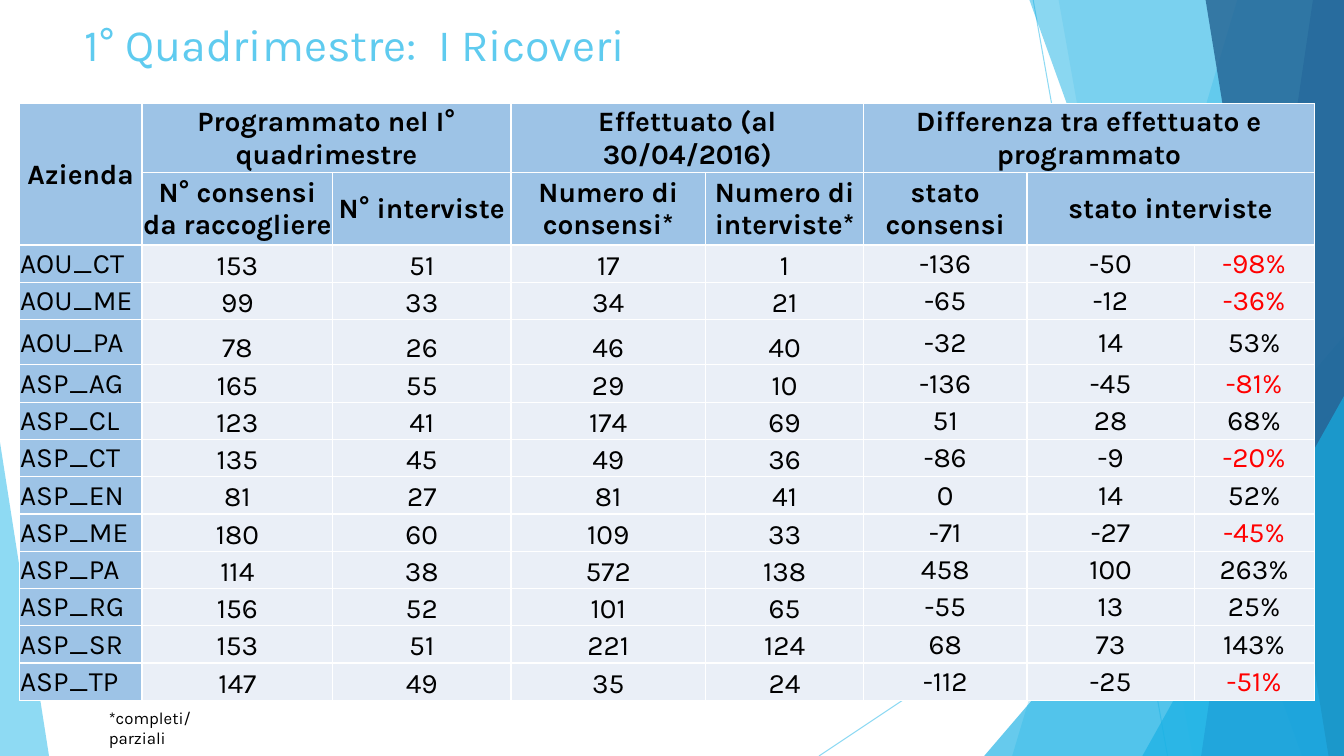
import lxml.etree
import pptx
import pptx.dml.color
import pptx.enum.shapes
import pptx.enum.text
import pptx.oxml
import pptx.oxml.ns
import pptx.util

Pt = pptx.util.Pt
qn = pptx.oxml.ns.qn
ALIGN = pptx.enum.text.PP_ALIGN
ANCHOR = pptx.enum.text.MSO_ANCHOR

FONT = "Karla"
BLACK, WHITE, RED = "000000", "FFFFFF", "FF0000"
SKY, AZURE, BLUE, NAVY = "5FCBEF", "17B0E4", "2E83C3", "236292"
HEADER_FILL, BODY_FILL = "9DC3E6", "EAEFF7"
TOP, RIGHT, BOTTOM = -0.7, 960, 540

RAYS = [((738, 0), (834, BOTTOM)), ((RIGHT, 290), (585, BOTTOM))]

# Corner points, colour, opacity in percent; back to front.
FACETS = [
    ([(884.2, TOP), (RIGHT, TOP), (RIGHT, BOTTOM), (722.9, BOTTOM)], SKY, 36),
    ([(756, TOP), (RIGHT, TOP), (RIGHT, BOTTOM), (851.8, BOTTOM)], SKY, 20),
    ([(703.4, BOTTOM), (RIGHT, 239.8), (RIGHT, BOTTOM)], AZURE, 66),
    ([(735.1, TOP), (RIGHT, TOP), (RIGHT, BOTTOM), (929.5, BOTTOM)], AZURE, 50),
    ([(938.2, TOP), (RIGHT, TOP), (RIGHT, BOTTOM), (858.2, BOTTOM)], BLUE, 70),
    ([(861.1, TOP), (RIGHT, TOP), (RIGHT, BOTTOM), (949, BOTTOM)], NAVY, 80),
    ([(816.5, BOTTOM), (RIGHT, 283), (RIGHT, BOTTOM)], AZURE, 66),
    ([(0, BOTTOM), (0, 316.1), (35.3, BOTTOM)], SKY, 70),
]

COLUMN_WIDTHS = [87.8, 136.1, 127.4, 139, 113, 116.6, 119.5, 85.7]
HEADER_HEIGHTS = [49, 51.8]
ROW_HEIGHT, TALL_ROW_HEIGHT = 26.64, 32.4
TALL_AZIENDA = "AOU_PA"

# Row, column, rows spanned, columns spanned, heading.
HEADINGS = [
    (0, 0, 2, 1, "Azienda"),
    (0, 1, 1, 2, "Programmato nel I° quadrimestre"),
    (0, 3, 1, 2, "Effettuato (al 30/04/2016)"),
    (0, 5, 1, 3, "Differenza tra effettuato e programmato"),
    (1, 1, 1, 1, "N° consensi da raccogliere"),
    (1, 2, 1, 1, "N° interviste"),
    (1, 3, 1, 1, "Numero di consensi*"),
    (1, 4, 1, 1, "Numero di interviste*"),
    (1, 5, 1, 1, "stato consensi"),
    (1, 6, 1, 2, "stato interviste"),
]

RICOVERI = [
    ("AOU_CT", "153", "51", "17", "1", "-136", "-50", "-98%"),
    ("AOU_ME", "99", "33", "34", "21", "-65", "-12", "-36%"),
    ("AOU_PA", "78", "26", "46", "40", "-32", "14", "53%"),
    ("ASP_AG", "165", "55", "29", "10", "-136", "-45", "-81%"),
    ("ASP_CL", "123", "41", "174", "69", "51", "28", "68%"),
    ("ASP_CT", "135", "45", "49", "36", "-86", "-9", "-20%"),
    ("ASP_EN", "81", "27", "81", "41", "0", "14", "52%"),
    ("ASP_ME", "180", "60", "109", "33", "-71", "-27", "-45%"),
    ("ASP_PA", "114", "38", "572", "138", "458", "100", "263%"),
    ("ASP_RG", "156", "52", "101", "65", "-55", "13", "25%"),
    ("ASP_SR", "153", "51", "221", "124", "68", "73", "143%"),
    ("ASP_TP", "147", "49", "35", "24", "-112", "-25", "-51%"),
]


def rgb(color):
    return pptx.dml.color.RGBColor.from_string(color)


def set_opacity(shape, percent):
    for color in shape.element.spPr.iter(qn("a:srgbClr")):
        lxml.etree.SubElement(color, qn("a:alpha"), val=str(percent * 1000))


def add_ray(slide, start, end):
    ray = slide.shapes.add_connector(
        pptx.enum.shapes.MSO_CONNECTOR.STRAIGHT, *map(Pt, start + end))
    ray.line.color.rgb = rgb(SKY)
    ray.line.width = Pt(0.75)
    set_opacity(ray, 70)
    lxml.etree.SubElement(ray.element.spPr, qn("a:effectLst"))


def add_facet(slide, corners, color, opacity):
    outline = slide.shapes.build_freeform(*corners[0], scale=Pt(1))
    outline.add_line_segments(corners[1:], close=True)
    facet = outline.convert_to_shape()
    facet.shadow.inherit = False
    facet.fill.solid()
    facet.fill.fore_color.rgb = rgb(color)
    facet.line.fill.background()
    set_opacity(facet, opacity)


def style_font(font, size, color, bold=False):
    font.name = FONT
    font.size = Pt(size)
    font.bold = bold
    font.color.rgb = rgb(color)


def add_text(slide, text, box, size, color):
    frame = slide.shapes.add_textbox(*map(Pt, box)).text_frame
    frame.word_wrap = True
    frame.text = text
    style_font(frame.paragraphs[0].font, size, color)


def paint_cell(cell, fill):
    """Give a cell white borders and a solid fill."""
    properties = cell._tc.get_or_add_tcPr()
    for side in ("lnL", "lnR", "lnT", "lnB"):
        border = lxml.etree.SubElement(properties, qn("a:" + side), w=str(Pt(1)))
        paint = lxml.etree.SubElement(border, qn("a:solidFill"))
        lxml.etree.SubElement(paint, qn("a:srgbClr"), val=WHITE)
    cell.fill.solid()
    cell.fill.fore_color.rgb = rgb(fill)


def write_cell(cell, text, color=BLACK, bold=False, align=ALIGN.CENTER,
               anchor=ANCHOR.MIDDLE):
    cell.text = text
    cell.vertical_anchor = anchor
    cell.margin_left = cell.margin_right = cell.margin_top = Pt(0.7)
    cell.margin_bottom = 0
    paragraph = cell.text_frame.paragraphs[0]
    paragraph.alignment = align
    style_font(paragraph.font, 20, color, bold)


def write_azienda(table, row, figures):
    """Fill one body row: name, four counts, three differences."""
    for column, text in enumerate(figures):
        cell = table.cell(row, column)
        if column == 0:
            write_cell(cell, text, align=ALIGN.LEFT)
        elif column <= 4:
            write_cell(cell, text, anchor=ANCHOR.BOTTOM)
        else:
            shortfall = text.startswith("-") and text.endswith("%")
            write_cell(cell, text, color=RED if shortfall else BLACK)


def add_ricoveri_table(slide):
    heights = HEADER_HEIGHTS + [
        TALL_ROW_HEIGHT if figures[0] == TALL_AZIENDA else ROW_HEIGHT
        for figures in RICOVERI]
    table = slide.shapes.add_table(
        len(heights), len(COLUMN_WIDTHS), Pt(13.7), Pt(74.2),
        Pt(sum(COLUMN_WIDTHS)), Pt(sum(heights))).table
    table.first_row = table.horz_banding = False
    for column, width in zip(table.columns, COLUMN_WIDTHS):
        column.width = Pt(width)
    header_rows = len(HEADER_HEIGHTS)
    for r, height in enumerate(heights):
        table.rows[r].height = Pt(height)
        for c in range(len(COLUMN_WIDTHS)):
            is_heading = r < header_rows or c == 0
            paint_cell(table.cell(r, c), HEADER_FILL if is_heading else BODY_FILL)
    for r, c, row_span, column_span, heading in HEADINGS:
        cell = table.cell(r, c)
        if row_span * column_span > 1:
            cell.merge(table.cell(r + row_span - 1, c + column_span - 1))
        write_cell(cell, heading, bold=True)
    for r, figures in enumerate(RICOVERI, header_rows):
        write_azienda(table, r, figures)


def main():
    deck = pptx.Presentation()
    deck.slide_width, deck.slide_height = Pt(960), Pt(540)
    slide = deck.slides.add_slide(deck.slide_layouts[6])
    for start, end in RAYS:
        add_ray(slide, start, end)
    for corners, color, opacity in FACETS:
        add_facet(slide, corners, color, opacity)
    add_text(slide, "1° Quadrimestre:  I Ricoveri", (53.3, 8.6, 676.8, 42.5), 32, SKY)
    add_ricoveri_table(slide)
    add_text(slide, "*completi/parziali", (70.6, 501.8, 112, 21.6), 12, BLACK)
    deck.save("out.pptx")


if __name__ == "__main__":
    main()
